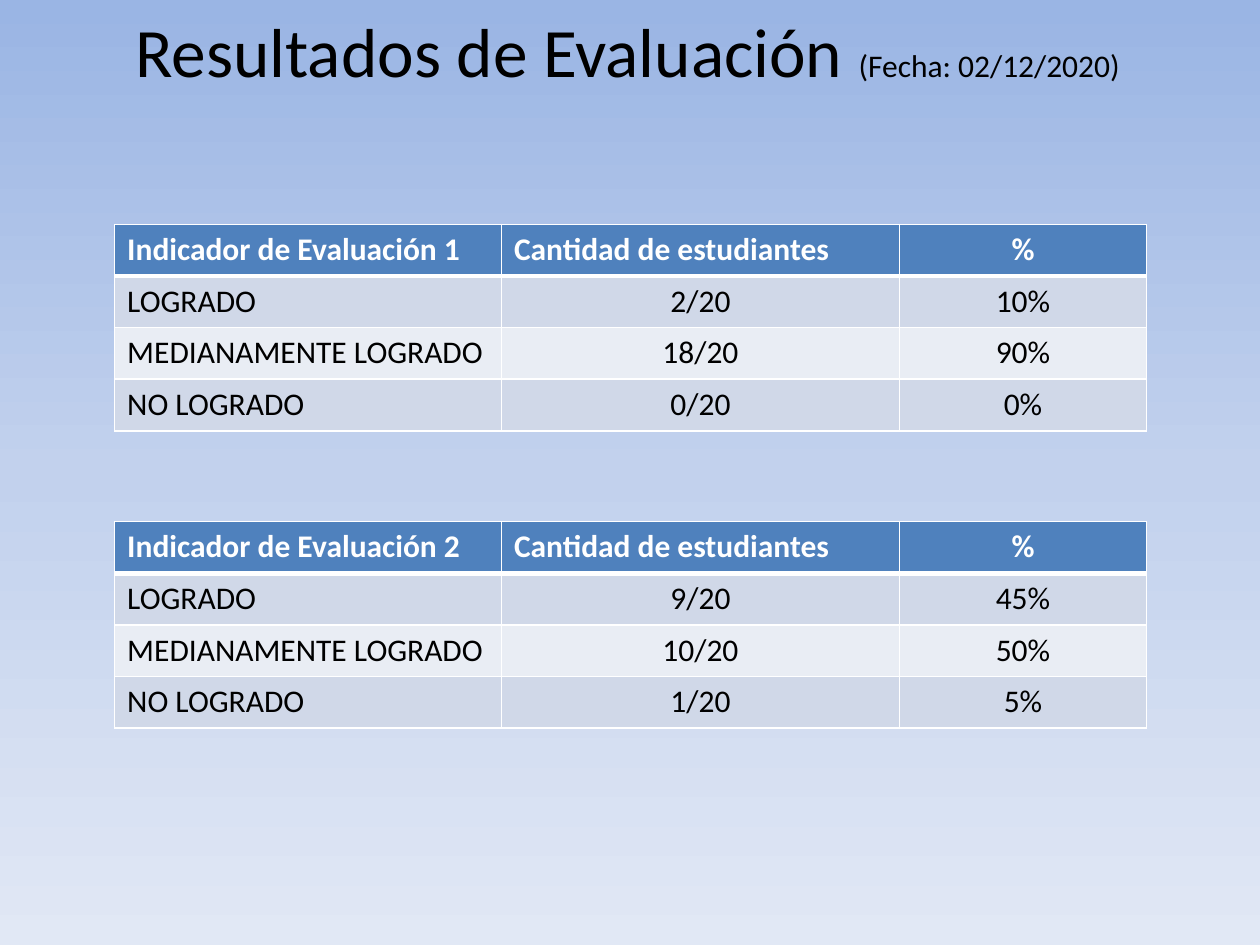
"""Build a slide with the results of two evaluation indicators."""
from copy import deepcopy

from lxml import etree
from pptx import Presentation
from pptx.dml.color import RGBColor
from pptx.enum.text import MSO_ANCHOR, MSO_AUTO_SIZE, PP_ALIGN
from pptx.oxml.ns import qn
from pptx.util import Inches, Pt

LEFT, CENTER = PP_ALIGN.LEFT, PP_ALIGN.CENTER
MIDDLE, NO_FIT = MSO_ANCHOR.MIDDLE, MSO_AUTO_SIZE.NONE
BLUE, WHITE, BLACK = "4F81BD", "FFFFFF", "000000"
BANDS = ("D0D8E8", "E9EDF4")
SKY = ((0, "9AB5E4"), (0.5, "C2D1ED"), (1, "E1E8F5"))
LEVELS = ("LOGRADO", "MEDIANAMENTE LOGRADO", "NO LOGRADO")
COLUMNS = (3.07, 3.16, 1.96)
ROW = 0.41
INDICATORS = (
    (1.78, "Indicador de Evaluación 1", ("2/20", "18/20", "0/20"), ("10%", "90%", "0%")),
    (4.14, "Indicador de Evaluación 2", ("9/20", "10/20", "1/20"), ("45%", "50%", "5%")),
)


def paint(colour):
    return RGBColor.from_string(colour)


def write(para, text, size=18, colour=BLACK, bold=False, align=LEFT):
    para.alignment = align
    span = para.add_run()
    span.text = text
    span.font.name = "Calibri"
    span.font.size = Pt(size)
    span.font.bold = bold
    span.font.color.rgb = paint(colour)


deck = Presentation()
deck.slide_width, deck.slide_height = Inches(10), Inches(7.5)
page = deck.slides.add_slide(deck.slide_layouts[5])

sky = page.background.fill
sky.gradient()
sky.gradient_angle = 270
stop_list = page.element.find(".//" + qn("a:gsLst"))
stop_list.insert(1, deepcopy(stop_list[0]))
for stop, (position, colour) in zip(sky.gradient_stops, SKY):
    stop.position = position
    stop.color.rgb = paint(colour)

title = page.shapes.title
title.left, title.top = Inches(0.51), 0
title.width, title.height = Inches(9), Inches(0.79)
title.text_frame.auto_size = NO_FIT
title.text_frame.vertical_anchor = MIDDLE
heading = title.text_frame.paragraphs[0]
write(heading, "Resultados de Evaluación ", size=39.6, align=CENTER)
write(heading, "(Fecha: 02/12/2020) ", align=CENTER)

for top, indicator, counts, shares in INDICATORS:
    rows = [(indicator, "Cantidad de estudiantes", "%"), *zip(LEVELS, counts, shares)]
    table = page.shapes.add_table(
        len(rows), len(COLUMNS), Inches(0.91), Inches(top),
        Inches(sum(COLUMNS)), Inches(ROW * len(rows))).table
    for column, width in zip(table.columns, COLUMNS):
        column.width = Inches(width)
    for r, row in enumerate(rows):
        header = r == 0
        for c, text in enumerate(row):
            cell = table.cell(r, c)
            centred = c == 2 or (c == 1 and not header)
            write(cell.text_frame.paragraphs[0], text, bold=header,
                  colour=WHITE if header else BLACK, align=CENTER if centred else LEFT)
            properties = cell._tc.get_or_add_tcPr()
            for side in ("lnL", "lnR", "lnT", "lnB"):
                heavy = (r, side) in ((0, "lnB"), (1, "lnT"))
                line = etree.SubElement(properties, qn("a:" + side), w=str(Pt(3 if heavy else 1)))
                solid = etree.SubElement(line, qn("a:solidFill"))
                etree.SubElement(solid, qn("a:srgbClr"), val=WHITE)
            cell.fill.solid()
            cell.fill.fore_color.rgb = paint(BLUE if header else BANDS[(r - 1) % 2])

deck.save("out.pptx")
